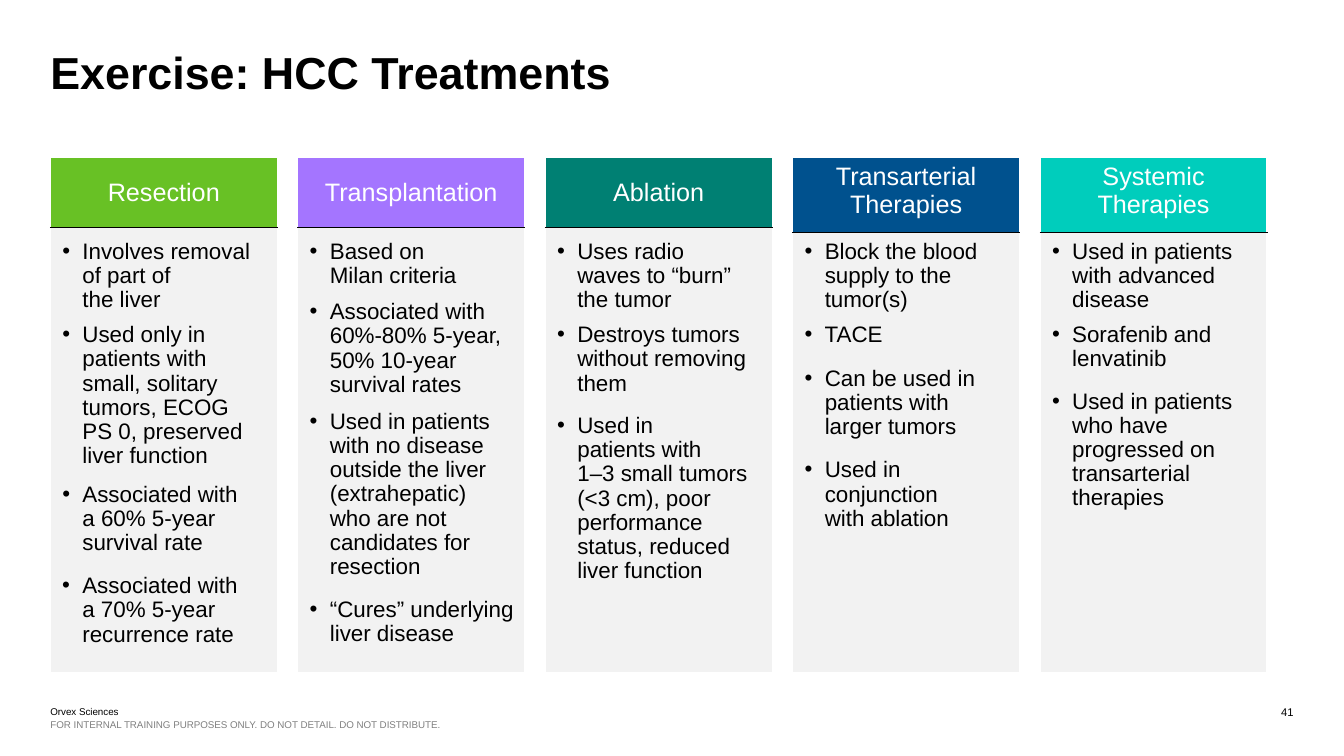
from lxml import etree
from pptx import Presentation
from pptx.dml.color import RGBColor
from pptx.enum.text import MSO_ANCHOR, MSO_AUTO_SIZE, PP_ALIGN
from pptx.oxml.ns import qn
from pptx.util import Pt

LEFT, CENTER, RIGHT = PP_ALIGN.LEFT, PP_ALIGN.CENTER, PP_ALIGN.RIGHT
TOP, MIDDLE = MSO_ANCHOR.TOP, MSO_ANCHOR.MIDDLE
GROW, FIXED = MSO_AUTO_SIZE.SHAPE_TO_FIT_TEXT, MSO_AUTO_SIZE.NONE
FONT = "Arial"
COLORS = {
    "black": "000000", "white": "FFFFFF", "gray": "808080", "pale": "F2F2F2",
    "green": "68C125", "purple": "A475FF", "teal": "008073",
    "blue": "00518E", "aqua": "00CDBC",
}

TITLE = "Exercise: HCC Treatments"
# Each point: top, width, line count, text
COLUMNS = [
    ("Resection", "green", 50.4, MIDDLE, [
        (167.8, 154, 3, "Involves removal of part of \vthe liver"),
        (227.5, 157, 6, "Used only in patients with small, solitary tumors, "
                        "ECOG PS 0, preserved liver function"),
        (341.3, 150.5, 3, "Associated with \va 60% 5-year survival rate"),
        (406.8, 147, 3, "Associated with \va 70% 5-year recurrence rate"),
    ]),
    ("Transplantation", "purple", 50.4, MIDDLE, [
        (167.8, 140.4, 2, "Based on \vMilan criteria"),
        (211, 160.5, 4, "Associated with 60%-80% 5-year, "
                        "50% 10-year survival rates"),
        (289.4, 148.3, 7, "Used in patients with no disease outside the liver "
                          "(extrahepatic) who are not candidates for resection"),
        (423.4, 160.5, 2, "“Cures” underlying liver disease"),
    ]),
    ("Ablation", "teal", 50.4, MIDDLE, [
        (167.8, 151.2, 3, "Uses radio waves to “burn” the tumor"),
        (227.5, 169.2, 3, "Destroys tumors without removing them"),
        (292.3, 165, 7, "Used in \vpatients with \v1–3 small tumors (<3 cm), "
                        "poor performance status, reduced liver function"),
    ]),
    ("Transarterial Therapies", "blue", 53.8, TOP, [
        (167.8, 152.6, 3, "Block the blood supply to the tumor(s)"),
        (227.5, 80, 1, "TACE"),
        (258.5, 152.6, 3, "Can be used in patients with larger tumors"),
        (324, 154, 3, "Used in conjunction \vwith ablation"),
    ]),
    ("Systemic Therapies", "aqua", 53.8, TOP, [
        (167.8, 157.7, 3, "Used in patients with advanced disease"),
        (227.5, 139.7, 2, "Sorafenib and lenvatinib"),
        (275, 158.4, 5, "Used in patients who have progressed on "
                        "transarterial therapies"),
    ]),
]
FOOTER = [
    ((36, 504, 100, 9), "Orvex Sciences", 7, "black", LEFT),
    ((36, 513.4, 480, 9), "FOR INTERNAL TRAINING PURPOSES ONLY. "
     "DO NOT DETAIL. DO NOT DISTRIBUTE.", 7, "gray", LEFT),
    ((708, 504, 216, 28.8), "41", 8, "black", RIGHT),
]

EDGE, STEP, WIDTH = 36, 176.75, 162
TABLE_TOP, TABLE_HIGH = 112.3, 368
INSET, LINE, PAD = 1.4, 17.4, 7.6
HANG = 14.4


def color(name):
    return RGBColor.from_string(COLORS[name])


def style(frame, size, tint, align=LEFT, bold=False):
    for para in frame.paragraphs:
        para.alignment = align
        for run in para.runs:
            font = run.font
            font.name, font.size, font.bold = FONT, Pt(size), bold
            font.color.rgb = color(tint)


def no_margin(frame):
    frame.margin_left = frame.margin_right = 0
    frame.margin_top = frame.margin_bottom = 0


def add_text(slide, area, text, size, tint, align=LEFT):
    box = slide.shapes.add_textbox(*map(Pt, area))
    frame = box.text_frame
    frame.word_wrap = True
    frame.text = text
    style(frame, size, tint, align)
    return frame


def add_point(slide, left, point):
    top, width, lines, text = point
    area = (left, top, width, LINE * lines + PAD)
    frame = add_text(slide, area, text, 16, "black")
    frame.auto_size = GROW
    para = frame.paragraphs[0]
    para.line_spacing = 0.9
    para.space_after = Pt(6)
    props = para._p.get_or_add_pPr()
    props.set("marL", str(Pt(HANG)))
    props.set("indent", str(-Pt(HANG)))
    etree.SubElement(props, qn("a:buFont")).set("typeface", FONT)
    etree.SubElement(props, qn("a:buChar")).set("char", "•")


def paint(cell, tint, sides):
    props = cell._tc.get_or_add_tcPr()
    for side in sides:
        line = etree.SubElement(props, qn("a:ln" + side))
        line.set("w", str(Pt(1)))
        solid = etree.SubElement(line, qn("a:solidFill"))
        etree.SubElement(solid, qn("a:srgbClr")).set("val", COLORS["white"])
    cell.fill.solid()
    cell.fill.fore_color.rgb = color(tint)


def add_column(slide, left, name, tint, high, anchor):
    area = (left, TABLE_TOP, WIDTH, TABLE_HIGH)
    table = slide.shapes.add_table(2, 1, *map(Pt, area)).table
    props = table._tbl.tblPr
    for child in list(props):
        props.remove(child)
    table.horz_banding = False
    table.rows[0].height = Pt(high)
    table.rows[1].height = Pt(TABLE_HIGH - high)
    head, body = table.cell(0, 0), table.cell(1, 0)
    head.text_frame.text = name
    head.vertical_anchor = anchor
    style(head.text_frame, 18, "white", CENTER)
    paint(head, tint, "LRT")
    paint(body, "pale", "LRB")


def main():
    deck = Presentation()
    deck.slide_width, deck.slide_height = Pt(960), Pt(540)
    slide = deck.slides.add_slide(deck.slide_layouts[5])

    title = slide.shapes.title
    title.left, title.top, title.width, title.height = map(Pt, (36, 36, 888, 70.6))
    frame = title.text_frame
    frame.text = TITLE
    frame.auto_size = FIXED
    frame.vertical_anchor = TOP
    no_margin(frame)
    style(frame, 32, "black", bold=True)
    frame.paragraphs[0].line_spacing = Pt(34)

    for i, (name, tint, high, anchor, points) in enumerate(COLUMNS):
        left = EDGE + i * STEP
        add_column(slide, left, name, tint, high, anchor)
        for point in points:
            add_point(slide, left + INSET, point)

    for note in FOOTER:
        no_margin(add_text(slide, *note))

    deck.save("out.pptx")


if __name__ == "__main__":
    main()
